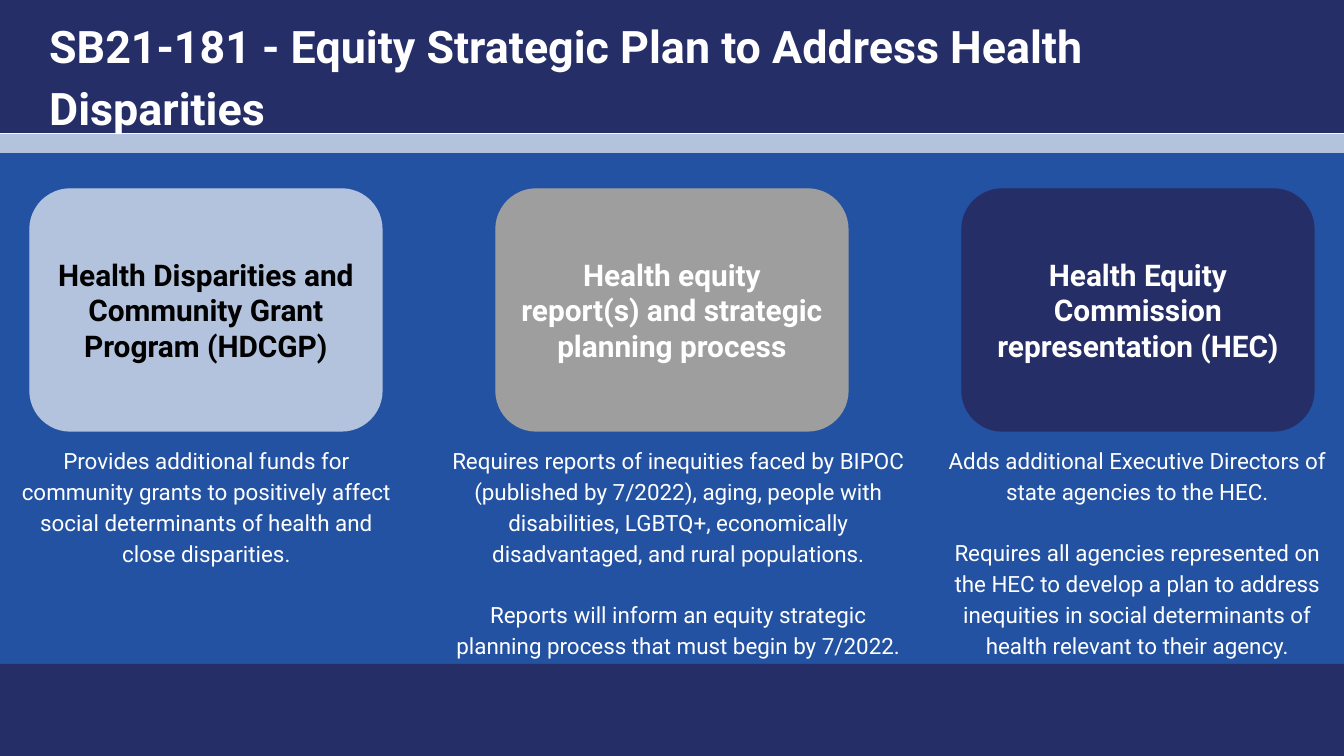
from pptx import Presentation
from pptx.dml.color import RGBColor
from pptx.enum.shapes import MSO_SHAPE
from pptx.enum.text import MSO_ANCHOR, PP_ALIGN
from pptx.util import Emu, Pt

RECT = MSO_SHAPE.RECTANGLE
ROUNDED = MSO_SHAPE.ROUNDED_RECTANGLE
TOP, MIDDLE = MSO_ANCHOR.TOP, MSO_ANCHOR.MIDDLE
LEFT, CENTER = PP_ALIGN.LEFT, PP_ALIGN.CENTER

WHITE = RGBColor(0xFF, 0xFF, 0xFF)
BLACK = RGBColor(0x00, 0x00, 0x00)
BLUE = RGBColor(0x23, 0x52, 0xA2)
NAVY = RGBColor(0x25, 0x2E, 0x67)
PALE = RGBColor(0xB3, 0xC3, 0xDD)
GRAY = RGBColor(0x9E, 0x9E, 0x9E)

FONT = "Roboto"
SLIDE_W, SLIDE_H = 1344, 756
EMU_PER_PX = 914400 / 134.4

TITLE = "SB21-181 - Equity Strategic Plan to Address Health Disparities"
BANDS = [
    (141, 535, BLUE),
    (664, 92, NAVY),
    (0, 133, NAVY),
    (134, 19, PALE),
]
TOPICS = [
    {
        "heading": "Health Disparities and Community Grant Program (HDCGP)",
        "fill": PALE, "ink": BLACK, "detail_box": (4, 405, 148),
        "details": [
            "Provides additional funds for community grants to positively affect "
            "social determinants of health and close disparities.",
        ],
    },
    {
        "heading": "Health equity report(s) and strategic planning process",
        "fill": GRAY, "ink": WHITE, "detail_box": (434, 489, 241),
        "details": [
            "Requires reports of inequities faced by BIPOC (published by 7/2022), "
            "aging, people with disabilities, LGBTQ+, economically "
            "disadvantaged, and rural populations.",
            "Reports will inform an equity strategic planning process that must "
            "begin by 7/2022.",
        ],
    },
    {
        "heading": "Health Equity Commission representation (HEC)",
        "fill": NAVY, "ink": WHITE, "detail_box": (935, 405, 241),
        "details": [
            "Adds additional Executive Directors of state agencies to the HEC.",
            "Requires all agencies represented on the HEC to develop a plan to "
            "address inequities in social determinants of health relevant to "
            "their agency.",
        ],
    },
]
CARD_W, CARD_H, CARD_TOP, MARGIN = 352, 242, 189, 30
CARD_STEP = (SLIDE_W - 2 * MARGIN - CARD_W) // (len(TOPICS) - 1)
DETAIL_TOP = 430


def px(*lengths):
    return [Emu(round(length * EMU_PER_PX)) for length in lengths]


def write(shape, paragraphs, size, ink, bold=False, align=CENTER,
          anchor=TOP, spacing=1.0):
    frame = shape.text_frame
    frame.word_wrap = True
    frame.vertical_anchor = anchor
    frame.margin_left = frame.margin_right = Pt(7.2)
    frame.margin_top = frame.margin_bottom = Pt(7.2)
    frame.text = "\n".join(paragraphs)
    for index, paragraph in enumerate(frame.paragraphs):
        paragraph.alignment = align
        paragraph.line_spacing = spacing
        if index:
            paragraph.space_before = Pt(16)
        for run in paragraph.runs:
            run.font.name = FONT
            run.font.size = Pt(size)
            run.font.bold = bold
            run.font.color.rgb = ink


def add_block(shapes, kind, box, fill):
    block = shapes.add_shape(kind, *px(*box))
    block.shadow.inherit = False
    block.fill.solid()
    block.fill.fore_color.rgb = fill
    block.line.fill.background()
    return block


def main():
    prs = Presentation()
    prs.slide_width, prs.slide_height = px(SLIDE_W, SLIDE_H)
    slide = prs.slides.add_slide(prs.slide_layouts[6])
    slide.background.fill.solid()
    slide.background.fill.fore_color.rgb = WHITE
    shapes = slide.shapes

    for top, height, fill in BANDS:
        add_block(shapes, RECT, (0, top, SLIDE_W, height), fill)

    title = shapes.add_textbox(*px(36, -3, 1253, 85))
    write(title, [TITLE], 24, WHITE, bold=True, align=LEFT, spacing=1.15)

    for column, topic in enumerate(TOPICS):
        card_box = (MARGIN + column * CARD_STEP, CARD_TOP, CARD_W, CARD_H)
        card = add_block(shapes, ROUNDED, card_box, topic["fill"])
        card.line.color.rgb = topic["fill"]
        card.line.width = Pt(0.75)
        write(card, [topic["heading"]], 16, topic["ink"], bold=True, anchor=MIDDLE)

        left, width, height = topic["detail_box"]
        detail = shapes.add_textbox(*px(left, DETAIL_TOP, width, height))
        write(detail, topic["details"], 12, WHITE, spacing=1.15)

    prs.save("out.pptx")


if __name__ == "__main__":
    main()
